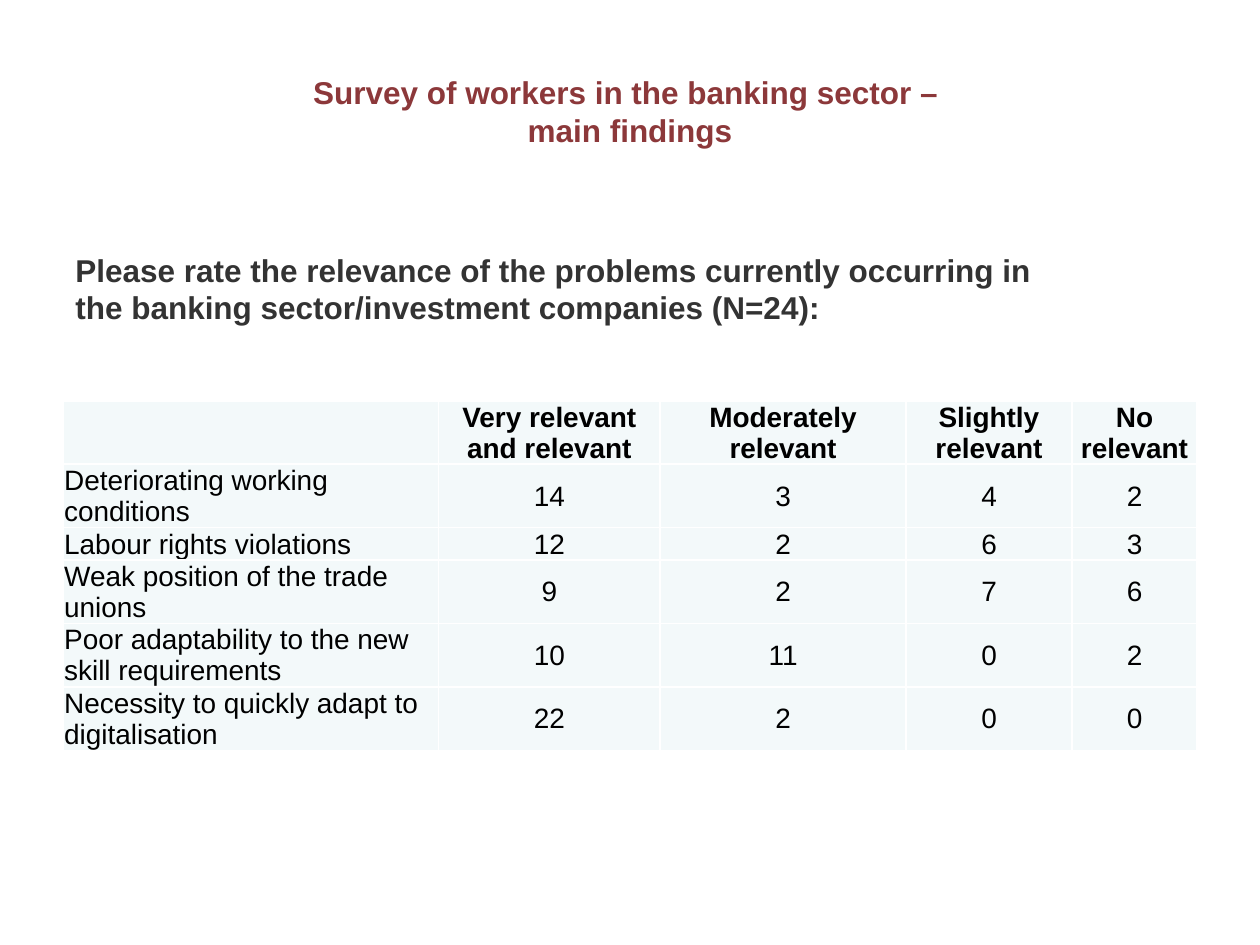
from dataclasses import dataclass

from lxml.etree import SubElement
from pptx import Presentation
from pptx.dml.color import RGBColor as RGB
from pptx.enum.text import MSO_ANCHOR as Anchor, MSO_AUTO_SIZE as AutoSize, PP_ALIGN as Align
from pptx.oxml.ns import qn
from pptx.util import Pt


@dataclass(frozen=True)
class Theme:
    face: str = "Arial"
    heading: str = "8C383A"
    question: str = "333333"
    ink: str = "000000"
    cell: str = "F3F9FA"
    rule: str = "FFFFFF"
    large: int = 18
    small: int = 16


class SurveySlide:
    """Hold the theme and the current slide, and add each kind of element to it."""

    def __init__(self, deck, theme):
        self.theme = theme
        self.slide = deck.slides.add_slide(deck.slide_layouts[5])

    def style(self, paragraph, size, color, bold, align):
        paragraph.alignment = align
        font = paragraph.font
        font.name, font.size, font.bold = self.theme.face, Pt(size), bold
        font.color.rgb = RGB.from_string(color)

    def title(self, wording, left, top, width, height):
        heading = self.slide.shapes.title
        heading.left, heading.top = Pt(left), Pt(top)
        heading.width, heading.height = Pt(width), Pt(height)
        frame = heading.text_frame
        frame.text = wording
        frame.auto_size, frame.vertical_anchor = AutoSize.NONE, Anchor.BOTTOM
        self.style(frame.paragraphs[0], self.theme.large, self.theme.heading, True, Align.CENTER)

    def text(self, wording, left, top, width, height):
        frame = self.slide.shapes.add_textbox(Pt(left), Pt(top), Pt(width), Pt(height)).text_frame
        frame.word_wrap, frame.auto_size = True, AutoSize.SHAPE_TO_FIT_TEXT
        frame.text = wording
        self.style(frame.paragraphs[0], self.theme.large, self.theme.question, True, Align.LEFT)

    def table(self, rows, left, top, widths, heights):
        grid = self.slide.shapes.add_table(
            len(rows), len(widths), Pt(left), Pt(top), Pt(sum(widths)), Pt(sum(heights))
        ).table
        grid.horz_banding = False
        for column, width in zip(grid.columns, widths):
            column.width = Pt(width)
        for r, (values, height) in enumerate(zip(rows, heights)):
            grid.rows[r].height = Pt(height)
            for c, value in enumerate(values):
                align = Align.CENTER if r == 0 or c > 0 else Align.LEFT
                self.cell(grid.cell(r, c), value, r == 0, align)

    def cell(self, cell, value, bold, align):
        cell.text = str(value)
        cell.vertical_anchor = Anchor.MIDDLE
        cell.margin_left = cell.margin_right = cell.margin_top = Pt(0.7)
        cell.margin_bottom = 0
        self.style(cell.text_frame.paragraphs[0], self.theme.small, self.theme.ink, bold, align)
        properties = cell._tc.get_or_add_tcPr()
        for side in ("a:lnL", "a:lnR", "a:lnT", "a:lnB"):
            border = SubElement(properties, qn(side), w=str(Pt(1)))
            SubElement(SubElement(border, qn("a:solidFill")), qn("a:srgbClr"), val=self.theme.rule)
        cell.fill.solid()
        cell.fill.fore_color.rgb = RGB.from_string(self.theme.cell)


def main():
    deck = Presentation()
    deck.slide_width, deck.slide_height = Pt(720), Pt(540)
    survey = SurveySlide(deck, Theme())
    survey.title("Survey of workers in the banking sector – \vmain findings", 36, 26, 648, 62.6)
    ratings = [
        ("", "Very relevant and relevant", "Moderately relevant", "Slightly relevant", "No relevant"),
        ("Deteriorating working conditions", 14, 3, 4, 2),
        ("Labour rights violations", 12, 2, 6, 3),
        ("Weak position of the trade unions", 9, 2, 7, 6),
        ("Poor adaptability to the new skill requirements", 10, 11, 0, 2),
        ("Necessity to quickly adapt to digitalisation", 22, 2, 0, 0),
    ]
    one_line, two_lines = 18.2, 35.8
    heights = [two_lines, two_lines, one_line, two_lines, two_lines, two_lines]
    survey.table(ratings, 36, 229, [214.6, 126.7, 140.4, 95, 71.3], heights)
    survey.text(
        "Please rate the relevance of the problems currently occurring in "
        "the banking sector/investment companies (N=24):",
        36, 139.7, 562.3, 51,
    )
    deck.save("out.pptx")


if __name__ == "__main__":
    main()
